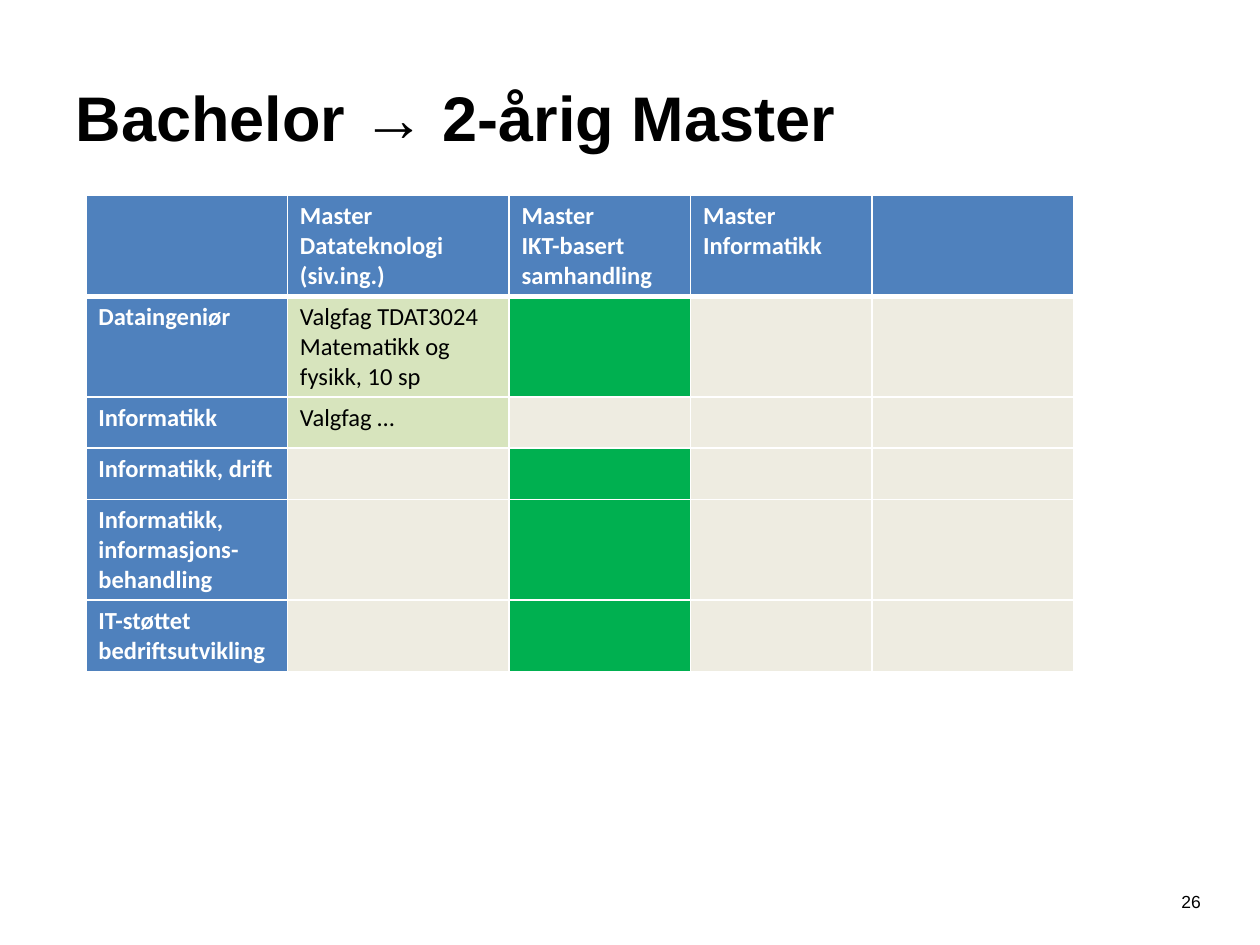
from copy import deepcopy

from lxml.etree import SubElement as Sub
from pptx import Presentation
from pptx.dml.color import RGBColor
from pptx.enum.text import MSO_ANCHOR as Anchor, PP_ALIGN as Align
from pptx.oxml.ns import qn
from pptx.util import Pt

BLUE, LIME, GREEN, SAND = "4F81BD", "D7E4BD", "00B050", "EEECE1"
WHITE, BLACK = "FFFFFF", "000000"

HEADS = ["", "Master\nDatateknologi\n(siv.ing.)",
         "Master\nIKT-basert samhandling", "Master\nInformatikk", ""]
# Programme, elective needed for Datateknologi, open to IKT-basert samhandling
ROWS = [
    ("Dataingeniør", "Valgfag TDAT3024 Matematikk og fysikk, 10 sp", True),
    ("Informatikk", "Valgfag …", False),
    ("Informatikk, drift", "", True),
    ("Informatikk, informasjons-behandling", "", True),
    ("IT-støttet bedriftsutvikling", "", True),
]
WIDTHS = [115.2, 126.72, 103.68, 103.68, 115.2]
ROW_H = 29.2


def color(hex):
    return RGBColor.from_string(hex)


def write(frame, text, size=14, font="Arial", ink=BLACK, bold=False, align=Align.LEFT):
    """Fill the first paragraph; a newline becomes a line break of the same size."""
    par = frame.paragraphs[0]
    par.text = text
    par.alignment = align
    for run in par.runs:
        run.font.size = Pt(size)
        run.font.name = font
        run.font.bold = bold
        run.font.color.rgb = color(ink)
    for gap in par._p.findall(qn("a:br")):
        gap.append(deepcopy(par.runs[0]._r.rPr))


def edge(cell, top=1, bottom=1):
    props = cell._tc.get_or_add_tcPr()
    for side, width in zip("LRTB", (1, 1, top, bottom)):
        line = Sub(props, qn(f"a:ln{side}"), w=str(Pt(width)))
        Sub(Sub(line, qn("a:solidFill")), qn("a:srgbClr"), val=WHITE)


def paint(cell, text, fill, ink=WHITE, bold=True, **lines):
    edge(cell, **lines)
    cell.fill.solid()
    cell.fill.fore_color.rgb = color(fill)
    if text:
        write(cell.text_frame, text, font="Calibri", ink=ink, bold=bold)


def add_grid(slide):
    frame = slide.shapes.add_table(len(ROWS) + 1, len(HEADS), Pt(49), Pt(111.6),
                                   Pt(sum(WIDTHS)), Pt(272))
    table = frame.table
    for col, width in zip(table.columns, WIDTHS):
        col.width = Pt(width)
    for row in table.rows:
        row.height = Pt(ROW_H)
    for c, head in enumerate(HEADS):
        paint(table.cell(0, c), head, BLUE, bottom=3)
    for r, (name, course, ready) in enumerate(ROWS, 1):
        top = 3 if r == 1 else 1
        paint(table.cell(r, 0), name, BLUE, top=top)
        paint(table.cell(r, 1), course, LIME if course else SAND,
              ink=BLACK, bold=False, top=top)
        for c, fill in enumerate((GREEN if ready else SAND, SAND, SAND), 2):
            paint(table.cell(r, c), "", fill, top=top)


def add_title(slide, text):
    title = slide.shapes.title
    title.left, title.top, title.width, title.height = Pt(36), Pt(21.6), Pt(648), Pt(90)
    title.text_frame.vertical_anchor = Anchor.MIDDLE
    write(title.text_frame, text, size=36, bold=True)


def add_number(slide, text):
    box = slide.shapes.add_textbox(Pt(667.4), Pt(505.4), Pt(26.6), Pt(28.8))
    write(box.text_frame, text, size=10, align=Align.CENTER)


def main():
    deck = Presentation()
    deck.slide_width, deck.slide_height = Pt(720), Pt(540)
    slide = deck.slides.add_slide(deck.slide_layouts[5])
    add_number(slide, "26")
    add_title(slide, "Bachelor → 2-årig Master")
    add_grid(slide)
    deck.save("out.pptx")


if __name__ == "__main__":
    main()
